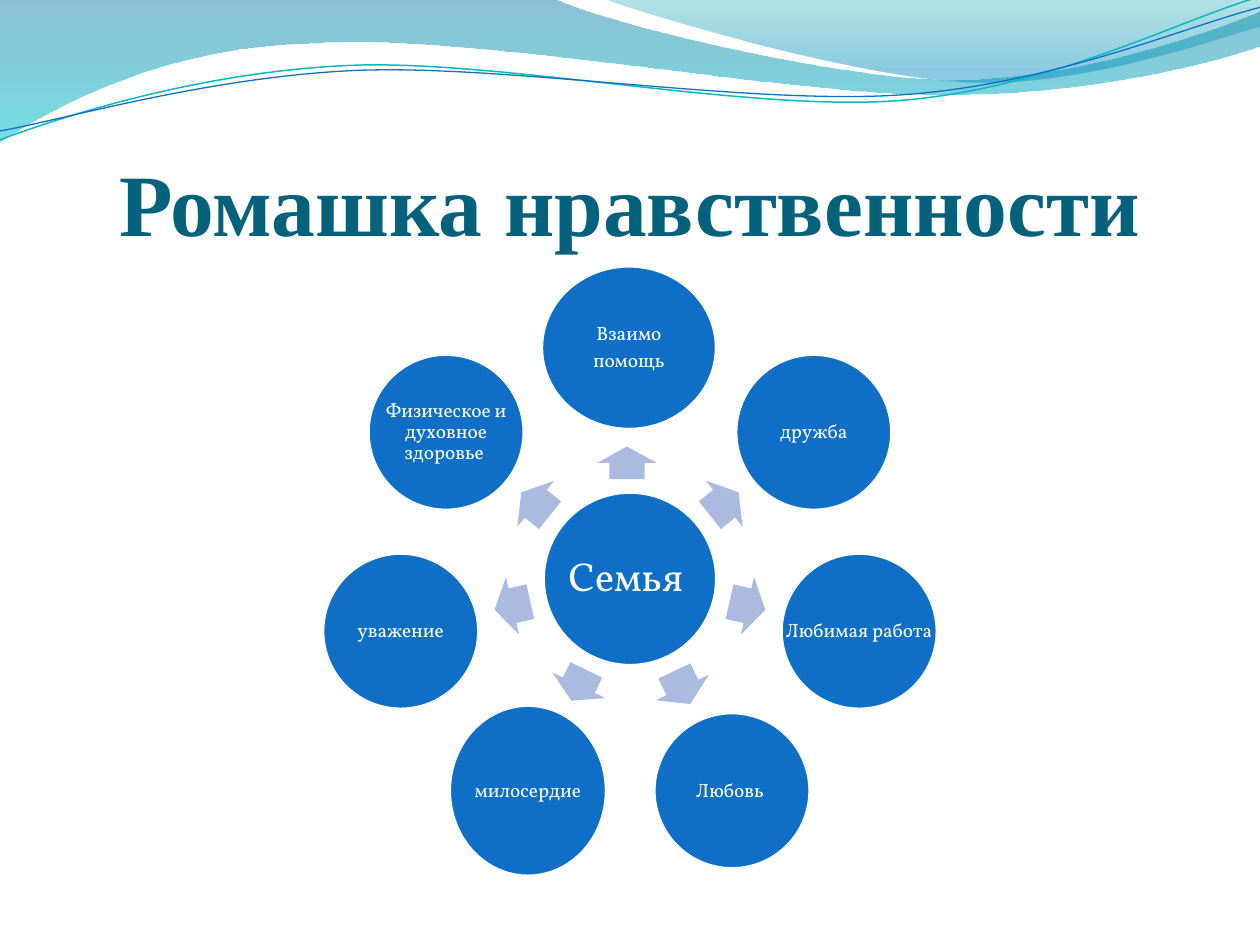
from math import cos, radians, sin

from lxml.etree import SubElement
from pptx import Presentation
from pptx.dml.color import RGBColor
from pptx.enum.shapes import MSO_SHAPE
from pptx.enum.text import MSO_ANCHOR, MSO_AUTO_SIZE, PP_ALIGN
from pptx.oxml.ns import qn
from pptx.util import Cm, Pt


def rgb(value):
    return RGBColor.from_string(value)


def add_circle(text, x, y, w, h, size, inset):
    """Blue circle centred on x, y (cm) with its label on top."""
    box = Cm(x - w / 2), Cm(y - h / 2), Cm(w), Cm(h)
    sp = s.shapes.add_shape(MSO_SHAPE.OVAL, *box)
    sp.shadow.inherit = False
    sp.fill.solid()
    sp.fill.fore_color.rgb = rgb("0F6FC6")
    sp.line.color.rgb = rgb("FFFFFF")
    sp.line.width = Pt(2)
    tf = s.shapes.add_textbox(*box).text_frame
    tf.text = text
    tf.word_wrap = True
    tf.vertical_anchor = MSO_ANCHOR.MIDDLE
    tf.margin_left = tf.margin_right = tf.margin_top = tf.margin_bottom = Cm(inset)
    for p in tf.paragraphs:
        p.alignment = PP_ALIGN.CENTER
        p.line_spacing = 0.9
        p.space_after = Pt(size * 0.35)
        font = p.runs[0].font
        font.name, font.size = "Vollkorn", Pt(size)
        font.color.rgb = rgb("FFFFFF")


prs = Presentation()
prs.slide_width, prs.slide_height = Cm(25.4), Cm(19.05)
s = prs.slides.add_slide(prs.slide_layouts[5])

# Waves: segments (L line, C curve), nodes in cm, gradient stops (position, colour, alpha), line
waves = [
    ("LCCLCCCL",
     [(0, 0), (11.18, -0.03), (12.09, 0.43), (16.87, 1.6), (19.25, 1.6),
      (21.67, 1.6), (24.33, 0.66), (25.4, 0.23), (25.43, 0.91),
      (24.97, 1.12), (22.1, 1.93), (18.95, 1.91), (15.8, 1.91), (9.7, 0.71), (6.53, 0.86),
      (3.28, 0.91), (1.17, 2.11), (-0.03, 2.87), (0, 0)],
     [(0, "0074A1", 45), (1, "00C6CF", 55)], None),
    ("CCLL",
     [(12.17, -0.03), (12.93, 0.28), (17.32, 1.57), (19.53, 1.65),
      (21.74, 1.75), (24.41, 0.81), (25.4, 0.53), (25.4, 0), (12.17, -0.03)],
     [(0, "00A1A9", 30), (0.8, "008BBF", 45)], None),
    ("CCC",
     [(0, 2.82), (1.22, 2.36), (4.01, 1.45), (7.04, 1.32), (10.03, 1.19), (15.06, 2.26),
      (18.11, 2.03), (21.16, 1.8), (23.83, 0.38), (25.35, -0.05)],
     None, ("0AB8BF", 0.85)),
    ("CCC",
     [(0, 2.64), (1.19, 2.44), (4.17, 1.55), (7.19, 1.42), (10.24, 1.3), (15.16, 2.13),
      (18.21, 1.91), (21.23, 1.7), (23.9, 0.53), (25.4, 0.15)],
     None, ("0F6FC6", 0.75)),
]
for segments, nodes, stops, line in waves:
    emu = [(Cm(x), Cm(y)) for x, y in nodes]
    builder = s.shapes.build_freeform(*emu[0])
    builder.add_line_segments(emu[1:], close=stops is not None)
    sp = builder.convert_to_shape()
    sp.shadow.inherit = False
    # Join each three nodes of a curve into one Bezier segment
    steps = iter(list(sp.element.spPr.iter(qn("a:lnTo"))))
    for kind in segments:
        step = next(steps)
        if kind == "C":
            step.tag = qn("a:cubicBezTo")
            for extra in (next(steps), next(steps)):
                step.append(extra[0])
                extra.getparent().remove(extra)
    if stops:
        sp.line.fill.background()
        sp.fill.gradient()
        sp.fill.gradient_angle = 270
        for stop, (position, colour, alpha) in zip(sp.fill.gradient_stops, stops):
            stop.position = position
            stop.color.rgb = rgb(colour)
        colours = sp.element.spPr.iter(qn("a:srgbClr"))
        for clr, (position, colour, alpha) in zip(colours, stops):
            SubElement(clr, qn("a:alpha")).set("val", str(alpha * 1000))
    else:
        sp.fill.background()
        sp.line.color.rgb = rgb(line[0])
        sp.line.width = Pt(line[1])

# Title, in front of the waves
title = s.shapes.title
title.element.getparent().append(title.element)
title.left, title.top, title.width, title.height = Cm(1.27), Cm(1.95), Cm(22.86), Cm(3.17)
tf = title.text_frame
tf.text = "Ромашка нравственности"
tf.auto_size = MSO_AUTO_SIZE.NONE
tf.vertical_anchor = MSO_ANCHOR.BOTTOM
tf.margin_left = tf.margin_right = tf.margin_bottom = 0
tf.margin_top = Cm(0.13)
p = tf.paragraphs[0]
p.alignment = PP_ALIGN.CENTER
font = p.runs[0].font
font.name, font.size, font.bold = "Times New Roman", Pt(50), True
font.color.rgb = rgb("04617B")

# Daisy: hub, then petals clockwise from the top
cx, cy = 12.7, 11.67
add_circle("Семья ", cx, cy, 3.5, 3.5, 23, 0.08)

arrow_w = 1.19
usual = (3.15, 3.15, 4.74, 0.74, 2.43)  # width, height, radius, arrow length, arrow radius
petals = [
    ("Взаимо\nпомощь", (3.53, 3.3, 4.66, 0.66, 2.34)),
    ("дружба", usual),
    ("Любимая работа", usual),
    ("Любовь ", usual),
    ("милосердие", (3.17, 3.45, 4.74, 0.69, 2.38)),
    ("уважение", usual),
    ("Физическое и духовное здоровье ", usual),
]
for i, (text, (w, h, radius, length, arrow_radius)) in enumerate(petals):
    angle = i * 360 / len(petals) - 90
    dx, dy = cos(radians(angle)), sin(radians(angle))
    shift = 0.02 if i == 0 else 0  # the top petal sits slightly left
    arrow = s.shapes.add_shape(
        MSO_SHAPE.RIGHT_ARROW,
        Cm(cx - 3 * shift + arrow_radius * dx - length / 2),
        Cm(cy + arrow_radius * dy - arrow_w / 2), Cm(length), Cm(arrow_w))
    arrow.rotation = angle % 360
    arrow.adjustments[0], arrow.adjustments[1] = 0.6, 0.5
    arrow.shadow.inherit = False
    arrow.fill.solid()
    arrow.fill.fore_color.rgb = rgb("ABBBDF")
    arrow.line.fill.background()
    add_circle(text, cx - shift + radius * dx, cy + radius * dy, w, h, 11, 0.05)

prs.save("out.pptx")
